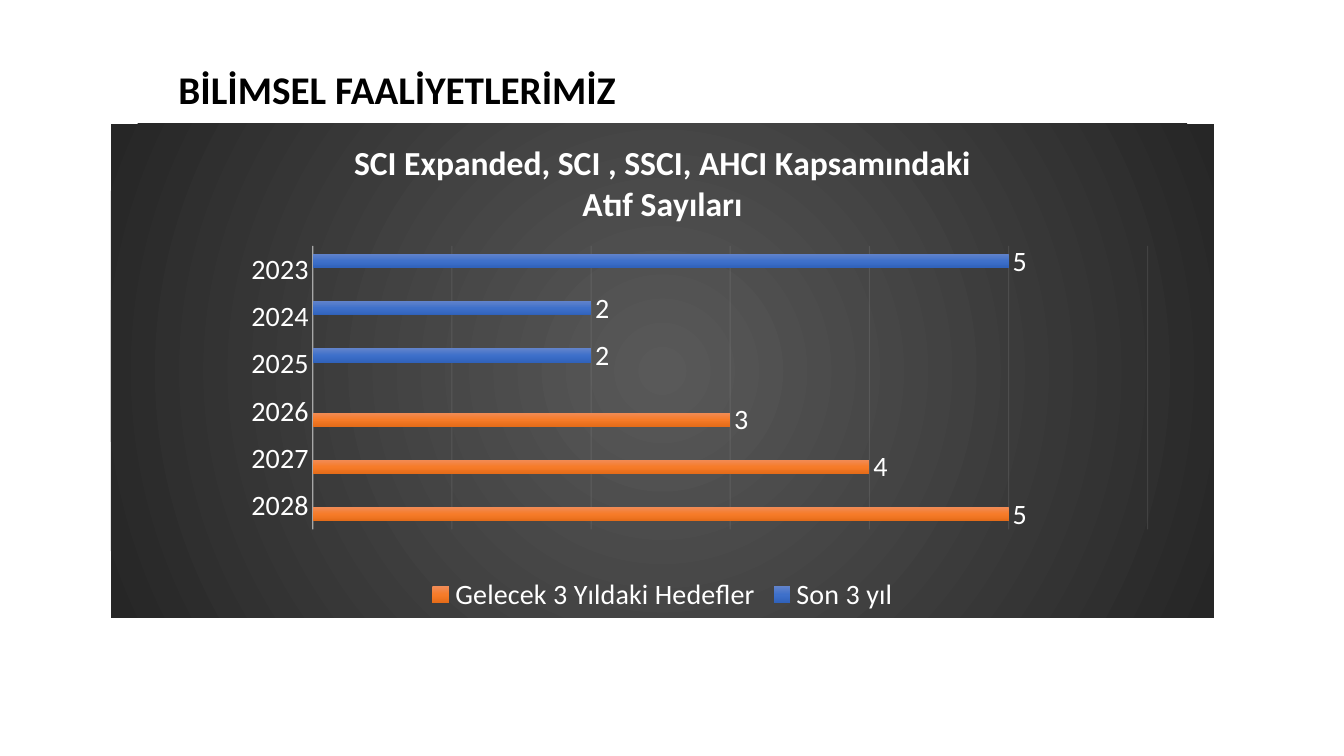
from lxml import etree
from pptx import Presentation
from pptx.chart.data import CategoryChartData
from pptx.dml.color import RGBColor
from pptx.enum.chart import (XL_CHART_TYPE, XL_LABEL_POSITION,
                             XL_LEGEND_POSITION, XL_TICK_MARK)
from pptx.enum.text import MSO_ANCHOR
from pptx.oxml import parse_xml
from pptx.oxml.ns import nsdecls, qn
from pptx.util import Inches, Pt

BAR = XL_CHART_TYPE.BAR_CLUSTERED
BOTTOM = XL_LEGEND_POSITION.BOTTOM
OUTSIDE = XL_LABEL_POSITION.OUTSIDE_END
NO_TICK = XL_TICK_MARK.NONE
MIDDLE = MSO_ANCHOR.MIDDLE

FACE = "Calibri"
WHITE = "FFFFFF"
PALE = "F2F2F2"
LINEAR = '<a:lin ang="5400000" scaled="0"/>'
RADIAL = ('<a:path path="circle"><a:fillToRect l="50000" t="50000" '
          'r="50000" b="50000"/></a:path>')

YEARS = ["2023", "2024", "2025", "2026", "2027", "2028"]
SERIES = [
    ("Son 3 yıl", [5, 2, 2, None, None, None],
     ["6183CB", "3E70CA", "3062BB"]),
    ("Gelecek 3 Yıldaki Hedefler", [None, None, None, 3, 4, 5],
     ["F18C57", "F67B28", "E56C19"]),
]
HEADING = "SCI Expanded, SCI , SSCI, AHCI Kapsamındaki\nAtıf Sayıları"


def set_font(font, size, color, bold=False):
    font.name = FACE
    font.size = Pt(size)
    font.bold = bold
    font.color.rgb = RGBColor.from_string(color)


def make_grad(colors, shade):
    step = 100000 // (len(colors) - 1)
    stops = "".join(
        f'<a:gs pos="{i * step}"><a:srgbClr val="{color}"/></a:gs>'
        for i, color in enumerate(colors))
    return parse_xml(f'<a:gradFill {nsdecls("a")} rotWithShape="1">'
                     f'<a:gsLst>{stops}</a:gsLst>{shade}</a:gradFill>')


def set_line(axis, line, width, alpha):
    line.width = Pt(width)
    line.color.rgb = RGBColor.from_string(PALE)
    for color in axis._element.xpath(".//c:spPr//a:srgbClr"):
        etree.SubElement(color, qn("a:alpha")).set("val", str(alpha * 1000))


def set_title(slide, text):
    title = slide.shapes.title
    title.left, title.top = Inches(1.67), Inches(0.4)
    title.width, title.height = Inches(9.5), Inches(1.02)
    frame = title.text_frame
    frame.text = text
    frame.vertical_anchor = MIDDLE
    para = frame.paragraphs[0]
    para.line_spacing = 0.9
    set_font(para.font, 28, "000000", True)


def set_plot(chart, x, y, w, h):
    area = chart._chartSpace.chart.plotArea
    for old in area.findall(qn("c:layout")):
        area.remove(old)
    sizes = "".join(f'<c:{tag} val="{val}"/>'
                    for tag, val in zip("xywh", (x, y, w, h)))
    area.insert(0, parse_xml(
        f'<c:layout {nsdecls("c")}><c:manualLayout>'
        '<c:layoutTarget val="inner"/><c:xMode val="edge"/>'
        f'<c:yMode val="edge"/>{sizes}</c:manualLayout></c:layout>'))


def set_back(chart, colors):
    props = parse_xml(f'<c:spPr {nsdecls("c", "a")}/>')
    props.append(make_grad(colors, RADIAL))
    etree.SubElement(etree.SubElement(props, qn("a:ln")), qn("a:noFill"))
    chart._chartSpace.chart.addnext(props)


def set_axes(chart):
    years = chart.category_axis
    years.reverse_order = True
    years.major_tick_mark = NO_TICK
    years.minor_tick_mark = NO_TICK
    set_line(years, years.format.line, 1, 54)
    set_font(years.tick_labels.font, 20, WHITE)
    scale = chart.value_axis
    scale.minimum_scale, scale.maximum_scale = 0, 6
    scale.major_unit = 1
    scale.visible = False
    scale.has_major_gridlines = True
    set_line(scale, scale.major_gridlines.format.line, 0.75, 10)


def set_bars(chart):
    plot = chart.plots[0]
    plot.gap_width = 115
    plot.overlap = -20
    plot.vary_by_categories = False
    for bars, (_, _, colors) in zip(plot.series, SERIES):
        bars._element.get_or_add_spPr().append(make_grad(colors, LINEAR))
        labels = bars.data_labels
        labels.show_value = True
        labels.position = OUTSIDE
        set_font(labels.font, 20, WHITE)


def add_bars(slide):
    data = CategoryChartData()
    data.categories = YEARS
    for name, values, _ in SERIES:
        data.add_series(name, values)
    chart = slide.shapes.add_chart(
        BAR, Inches(1.1), Inches(1.23), Inches(10.94), Inches(4.9), data).chart
    set_font(chart.font, 20, WHITE)
    set_back(chart, ["595959", "262626"])
    chart.has_title = True
    frame = chart.chart_title.text_frame
    frame.text = HEADING
    for para in frame.paragraphs:
        set_font(para.font, 24, WHITE, True)
    chart.chart_title.include_in_layout = False
    chart.has_legend = True
    chart.legend.position = BOTTOM
    chart.legend.include_in_layout = False
    set_font(chart.legend.font, 20, WHITE)
    set_axes(chart)
    set_bars(chart)
    set_plot(chart, 0.183, 0.247, 0.757, 0.574)


def main():
    deck = Presentation()
    deck.slide_width, deck.slide_height = Inches(13.33), Inches(7.5)
    slide = deck.slides.add_slide(deck.slide_layouts[5])
    set_title(slide, "BİLİMSEL FAALİYETLERİMİZ")
    slide.shapes.title.text_frame.paragraphs[0].alignment = 1
    add_bars(slide)
    deck.save("out.pptx")


if __name__ == "__main__":
    main()
